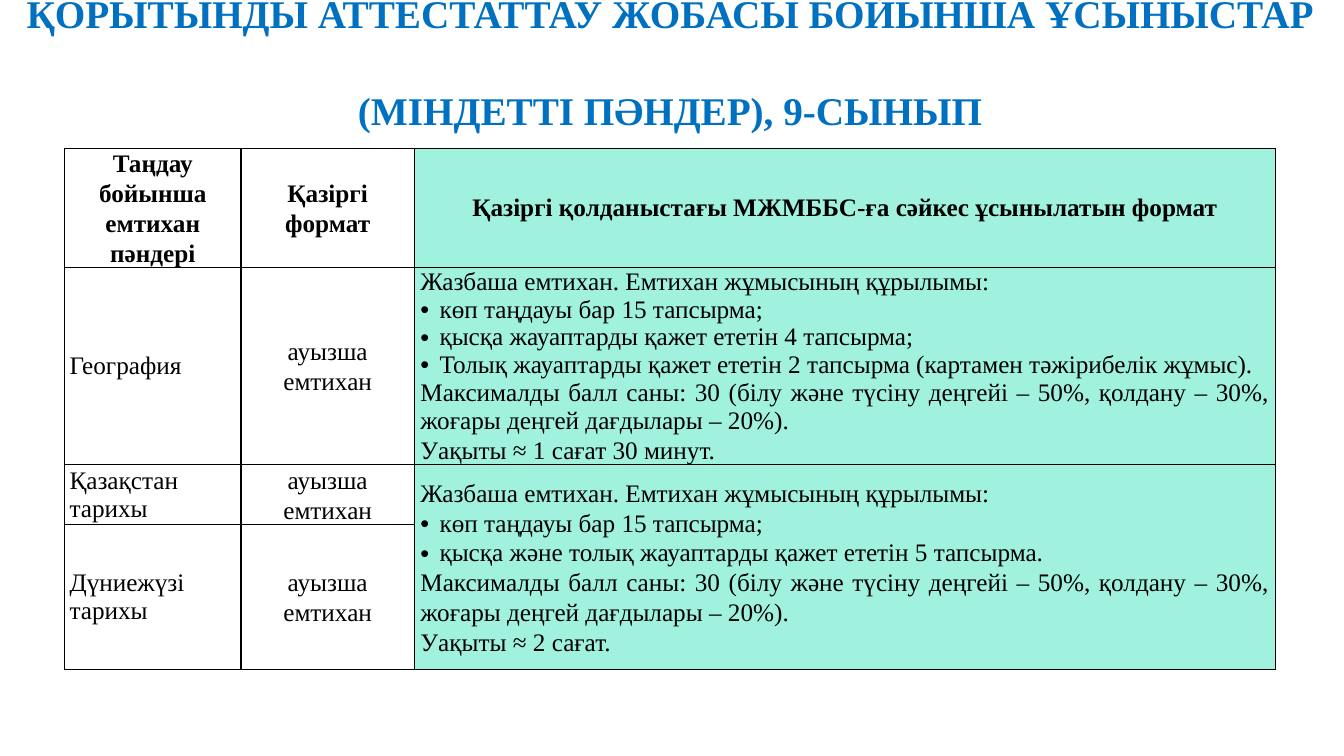
import dataclasses

import lxml.etree
import pptx
import pptx.dml.color
import pptx.enum.text
import pptx.oxml.ns
import pptx.util

Inches = pptx.util.Inches
Pt = pptx.util.Pt
Align = pptx.enum.text.PP_ALIGN
Anchor = pptx.enum.text.MSO_ANCHOR
qn = pptx.oxml.ns.qn


@dataclasses.dataclass(frozen=True)
class Theme:
    font: str = "Times New Roman"
    title_size: float = 28
    table_size: float = 18
    title_color: str = "0070C0"
    text_color: str = "000000"
    border_color: str = "000000"
    proposal_fill: str = "A0F1DE"
    plain_fill: str = "FFFFFF"
    loose: float = 1.07
    bullet_indent: float = 0.19


THEME = Theme()

TITLE_LINES = ["ҚОРЫТЫНДЫ АТТЕСТАТТАУ ЖОБАСЫ БОЙЫНША ҰСЫНЫСТАР",
               "(МІНДЕТТІ ПӘНДЕР), 9-СЫНЫП"]
HEADINGS = ["Таңдау бойынша емтихан пәндері", "Қазіргі формат",
            "Қазіргі қолданыстағы МЖМББС-ға сәйкес ұсынылатын формат"]
SUBJECTS = ["География", "Қазақстан тарихы", "Дүниежүзі тарихы"]
CURRENT_FORMAT = "ауызша емтихан"
STRUCTURE = "Жазбаша емтихан. Емтихан жұмысының құрылымы:"
CHOICE_TASKS = "көп таңдауы бар 15 тапсырма;"
MAX_SCORE = ("Максималды балл саны: 30 (білу және түсіну деңгейі – 50%, "
             "қолдану – 30%, жоғары деңгей дағдылары – 20%).")

# Paragraph formats
CENTER = {"alignment": Align.CENTER}
CENTER_LOOSE = {"alignment": Align.CENTER, "line_spacing": THEME.loose}
LEFT = {"alignment": Align.LEFT}
LEFT_LOOSE = {"alignment": Align.LEFT, "line_spacing": THEME.loose}
JUSTIFIED = {"alignment": Align.JUSTIFY}
JUSTIFIED_LOOSE = {"alignment": Align.JUSTIFY, "line_spacing": THEME.loose}

# Proposed formats: text, paragraph format, bulleted
GEOGRAPHY_PROPOSAL = [
    (STRUCTURE, LEFT, False),
    (CHOICE_TASKS, JUSTIFIED, True),
    ("қысқа жауаптарды қажет ететін 4 тапсырма;", JUSTIFIED, True),
    ("Толық жауаптарды қажет ететін 2 тапсырма (картамен тәжірибелік жұмыс).",
     JUSTIFIED, True),
    (MAX_SCORE, JUSTIFIED, False),
    ("Уақыты ≈ 1 сағат 30 минут.", JUSTIFIED_LOOSE, False),
]
HISTORY_PROPOSAL = [
    (STRUCTURE, LEFT_LOOSE, False),
    (CHOICE_TASKS, LEFT_LOOSE, True),
    ("қысқа және толық жауаптарды қажет ететін 5 тапсырма.", LEFT_LOOSE, True),
    (MAX_SCORE, JUSTIFIED_LOOSE, False),
    ("Уақыты ≈ 2 сағат.", JUSTIFIED_LOOSE, False),
]


def apply_format(target, values):
    for name, value in values.items():
        setattr(target, name, value)


def rgb(color):
    return pptx.dml.color.RGBColor.from_string(color)


def add_bullet(para):
    indent = Inches(THEME.bullet_indent)
    properties = para._p.get_or_add_pPr()
    properties.set("marL", str(indent))
    properties.set("indent", str(-indent))
    lxml.etree.SubElement(properties, qn("a:buFont"), typeface="Arial")
    lxml.etree.SubElement(properties, qn("a:buChar"), char="•")


def write_paragraphs(frame, paragraphs, size, color, bold):
    for index, (text, values, bulleted) in enumerate(paragraphs):
        para = frame.paragraphs[0] if index == 0 else frame.add_paragraph()
        apply_format(para, values)
        if bulleted:
            add_bullet(para)
        span = para.add_run()
        span.text = text
        apply_format(span.font, {"name": THEME.font, "size": Pt(size), "bold": bold})
        span.font.color.rgb = rgb(color)


def add_borders(cell):
    properties = cell._tc.get_or_add_tcPr()
    for position, side in enumerate(("a:lnL", "a:lnR", "a:lnT", "a:lnB")):
        line = lxml.etree.Element(qn(side), w=str(Pt(1)))
        fill = lxml.etree.SubElement(line, qn("a:solidFill"))
        lxml.etree.SubElement(fill, qn("a:srgbClr"), val=THEME.border_color)
        properties.insert(position, line)


def style_cell(cell, side_margin, fill):
    apply_format(cell, {"margin_left": Inches(side_margin), "margin_right": Inches(side_margin),
                        "margin_top": 0, "margin_bottom": 0,
                        "vertical_anchor": Anchor.MIDDLE})
    cell.fill.solid()
    cell.fill.fore_color.rgb = rgb(fill)
    add_borders(cell)


def place_title(page, left, top, width, height):
    title = page.shapes.title
    apply_format(title, {"left": Inches(left), "top": Inches(top),
                         "width": Inches(width), "height": Inches(height)})
    frame = title.text_frame
    apply_format(frame, {"word_wrap": True, "vertical_anchor": Anchor.BOTTOM,
                         "auto_size": pptx.enum.text.MSO_AUTO_SIZE.NONE,
                         "margin_left": 0, "margin_right": 0,
                         "margin_bottom": Inches(0.04)})
    paragraphs = [(line, {**CENTER, "space_before": Pt(gap)}, False)
                  for line, gap in zip(TITLE_LINES, (0, 35.5))]
    write_paragraphs(frame, paragraphs, THEME.title_size, THEME.title_color, True)


def place_table(page, left, top, column_widths, row_heights):
    table = page.shapes.add_table(
        len(row_heights), len(column_widths), Inches(left), Inches(top),
        Inches(sum(column_widths)), Inches(sum(row_heights))).table
    apply_format(table, {"first_row": False, "horz_banding": False})
    for column, width in zip(table.columns, column_widths):
        column.width = Inches(width)
    for row, height in zip(table.rows, row_heights):
        row.height = Inches(height)

    # Cell margins, fills and borders
    for row_index, row in enumerate(table.rows):
        for column_index, cell in enumerate(row.cells):
            is_subject = row_index > 0 and column_index == 0
            is_proposal = column_index == 2
            style_cell(cell, 0.05 if is_subject else 0.06,
                       THEME.proposal_fill if is_proposal else THEME.plain_fill)
    table.cell(2, 2).merge(table.cell(3, 2))

    # Cell wording
    contents = {(0, column): [(text, CENTER if column == 2 else CENTER_LOOSE, False)]
                for column, text in enumerate(HEADINGS)}
    for row_index, subject in enumerate(SUBJECTS, start=1):
        contents[row_index, 0] = [(subject, LEFT, False)]
        contents[row_index, 1] = [(CURRENT_FORMAT, CENTER_LOOSE, False)]
    contents[1, 2] = GEOGRAPHY_PROPOSAL
    contents[2, 2] = HISTORY_PROPOSAL
    for (row_index, column_index), paragraphs in contents.items():
        write_paragraphs(table.cell(row_index, column_index).text_frame, paragraphs,
                         THEME.table_size, THEME.text_color, row_index == 0)


def main():
    deck = pptx.Presentation()
    apply_format(deck, {"slide_width": Inches(13.33), "slide_height": Inches(7.5)})
    page = deck.slides.add_slide(deck.slide_layouts[5])
    place_table(page, 0.64, 1.47, [1.75, 1.72, 8.54], [0.81, 1.81, 0.53, 1.44])
    place_title(page, 0.14, 0.75, 13.01, 0.61)
    deck.save("out.pptx")


if __name__ == "__main__":
    main()
